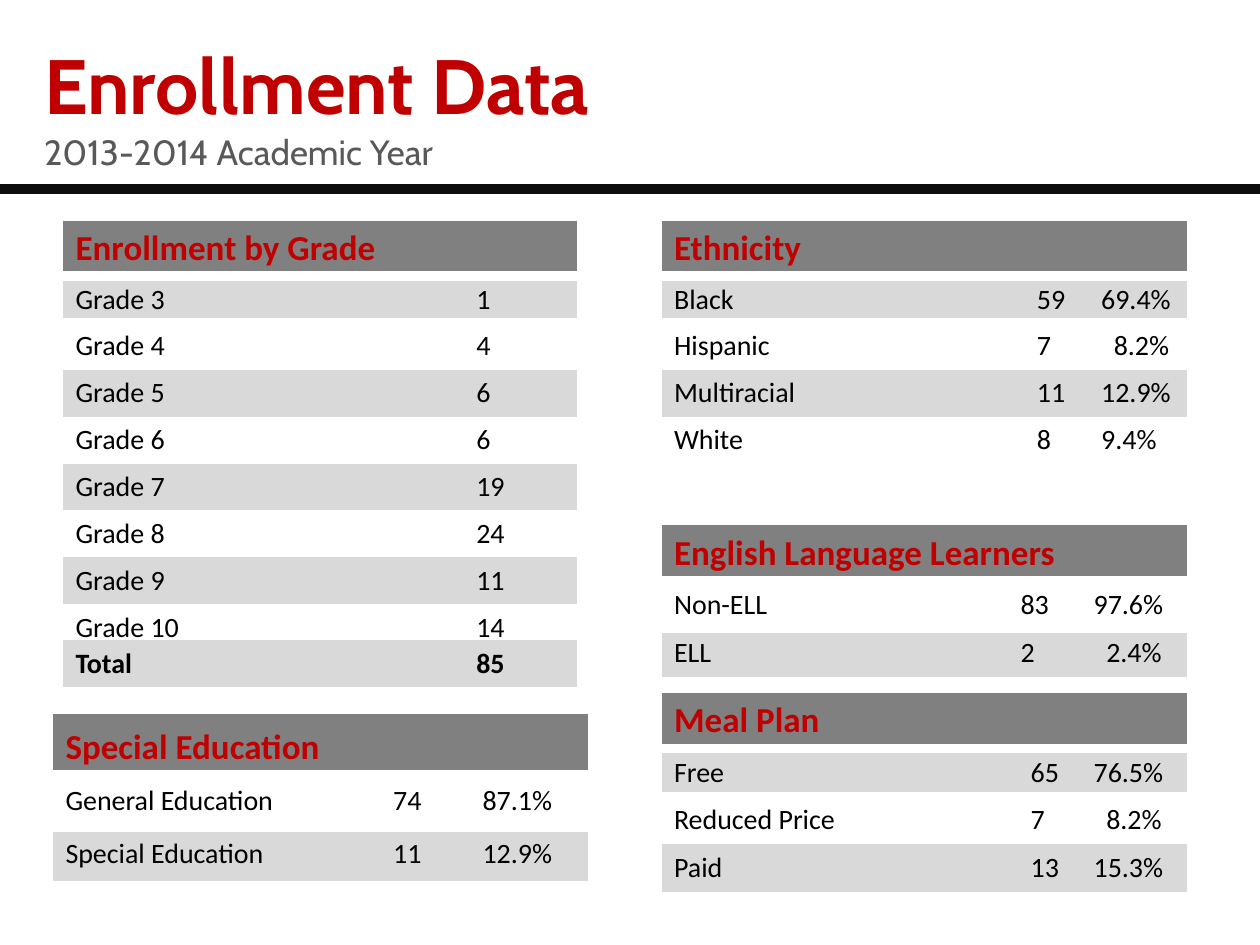
"""Build the enrollment data slide: a title, a rule and six small tables."""
from dataclasses import dataclass

from lxml.etree import SubElement
from pptx import Presentation
from pptx.dml.color import RGBColor
from pptx.enum.shapes import MSO_CONNECTOR
from pptx.enum.text import MSO_ANCHOR, MSO_AUTO_SIZE, PP_ALIGN
from pptx.oxml.ns import qn
from pptx.util import Inches, Pt


@dataclass(frozen=True)
class Theme:
    title_font: str = "Cabin"
    table_font: str = "Calibri"
    red: str = "C00000"
    gray: str = "595959"
    header: str = "808080"
    band: str = "D9D9D9"
    black: str = "000000"
    rule: str = "0D0D0D"
    white: str = "FFFFFF"
    title_size: int = 44
    subtitle_size: int = 20
    header_size: int = 20
    body_size: int = 16
    rule_width: int = 6


THEME = Theme()
NO_STYLE = "{2D5ABB26-0587-4C30-8999-92F81FD0307C}"
TITLE = "Enrollment Data"
SUBTITLE = "2013-2014 Academic Year"
INDENTED = {"8.2%", "2.4%"}

TABLES = [
    dict(header="Ethnicity", at=(5.25, 1.75), cols=(2.88, 0.51, 0.78),
         heights=(0.44, 0.37), first_band=0,
         rows=[("Black", "59", "69.4%"), ("Hispanic", "7", "8.2%"),
               ("Multiracial", "11", "12.9%"), ("White", "8", "9.4%")]),
    dict(header="Enrollment by Grade", at=(0.5, 1.75), cols=(3.18, 0.9),
         heights=(0.44, 0.37), first_band=0,
         rows=[("Grade 3", "1"), ("Grade 4", "4"), ("Grade 5", "6"),
               ("Grade 6", "6"), ("Grade 7", "19"), ("Grade 8", "24"),
               ("Grade 9", "11"), ("Grade 10", "14")]),
    dict(header="English Language Learners", at=(5.25, 4.17),
         cols=(2.75, 0.58, 0.84), heights=(0.44, 0.38), first_band=1,
         rows=[("Non-ELL", "83", "97.6%"), ("ELL", "2", "2.4%")]),
    dict(header="Special Education", at=(0.42, 5.67),
         cols=(2.6, 0.71, 0.94), heights=(0.48, 0.42), first_band=1,
         rows=[("General Education", "74", "87.1%"),
               ("Special Education", "11", "12.9%")]),
    dict(header="Meal Plan", at=(5.25, 5.5), cols=(2.83, 0.5, 0.84),
         heights=(0.44, 0.38), first_band=0,
         rows=[("Free", "65", "76.5%"), ("Reduced Price", "7", "8.2%"),
               ("Paid", "13", "15.3%")]),
    dict(header=None, at=(0.5, 5.08), cols=(3.18, 0.9),
         heights=(0.44, 0.37), first_band=0, rows=[("Total", "85")]),
]


def style_paragraph(p, font, size, color, bold):
    p.alignment = PP_ALIGN.LEFT
    p.font.name = font
    p.font.size = Pt(size)
    p.font.bold = bold
    p.font.color.rgb = RGBColor.from_string(color)


def add_title(slide):
    sp = slide.shapes.title
    sp.left, sp.top = Inches(0.25), Inches(0.25)
    sp.width, sp.height = Inches(9.5), Inches(1.33)
    sp.fill.solid()
    sp.fill.fore_color.rgb = RGBColor.from_string(THEME.white)
    tf = sp.text_frame
    tf.word_wrap = True
    tf.auto_size = MSO_AUTO_SIZE.NONE
    tf.vertical_anchor = MSO_ANCHOR.TOP
    tf.text = f"{TITLE}\n{SUBTITLE}"
    title, subtitle = tf.paragraphs
    style_paragraph(title, THEME.title_font, THEME.title_size, THEME.red, True)
    style_paragraph(subtitle, THEME.title_font, THEME.subtitle_size, THEME.gray, False)


def add_rule(slide, width):
    y = Inches(1.5)
    line = slide.shapes.add_connector(MSO_CONNECTOR.STRAIGHT, 0, y, width, y)
    line.line.color.rgb = RGBColor.from_string(THEME.rule)
    line.line.width = Pt(THEME.rule_width)
    SubElement(line._element.spPr, qn("a:effectLst"))


def set_border(cell, side):
    tc_pr = cell._tc.get_or_add_tcPr()
    ln = SubElement(tc_pr, qn(f"a:{side}"), w=str(Pt(THEME.rule_width)))
    fill = SubElement(ln, qn("a:solidFill"))
    SubElement(fill, qn("a:srgbClr"), val=THEME.white)
    tc_pr.insert(0, ln)


def style_cell(cell, text, fill, size, color, bold, anchor):
    if fill:
        cell.fill.solid()
        cell.fill.fore_color.rgb = RGBColor.from_string(fill)
    else:
        cell.fill.background()
    cell.vertical_anchor = anchor
    cell.text = text
    if text in INDENTED:
        cell.margin_left = Inches(0.2)
    style_paragraph(cell.text_frame.paragraphs[0], THEME.table_font, size, color, bold)


def add_header(tbl, text):
    for i, cell in enumerate(tbl.rows[0].cells):
        style_cell(cell, "" if i else text, THEME.header, THEME.header_size,
                   THEME.red, True, MSO_ANCHOR.BOTTOM)
        set_border(cell, "lnB")
    for cell in tbl.rows[1].cells:
        set_border(cell, "lnT")
    tbl.cell(0, 0).merge(tbl.cell(0, 1))


def add_data_table(slide, header, at, cols, heights, first_band, rows):
    skip = 1 if header else 0
    row_heights = [heights[0]] * skip + [heights[1]] * len(rows)
    tbl = slide.shapes.add_table(
        len(row_heights), len(cols), *map(Inches, at),
        Inches(sum(cols)), Inches(sum(row_heights))).table
    tbl.first_row = tbl.horz_banding = False
    tbl._tbl.tblPr.find(qn("a:tableStyleId")).text = NO_STYLE
    for col, width in zip(tbl.columns, cols):
        col.width = Inches(width)
    for row, height in zip(tbl.rows, row_heights):
        row.height = Inches(height)
    for r, values in enumerate(rows):
        fill = THEME.band if r % 2 == first_band else None
        for c, value in enumerate(values):
            style_cell(tbl.cell(r + skip, c), value, fill, THEME.body_size,
                       THEME.black, not header, MSO_ANCHOR.MIDDLE)
    if header:
        add_header(tbl, header)


def main():
    prs = Presentation()
    prs.slide_width, prs.slide_height = Inches(10), Inches(7.5)
    slide = prs.slides.add_slide(prs.slide_layouts[5])
    add_title(slide)
    add_rule(slide, prs.slide_width)
    for table in TABLES:
        add_data_table(slide, **table)
    prs.save("out.pptx")


if __name__ == "__main__":
    main()
